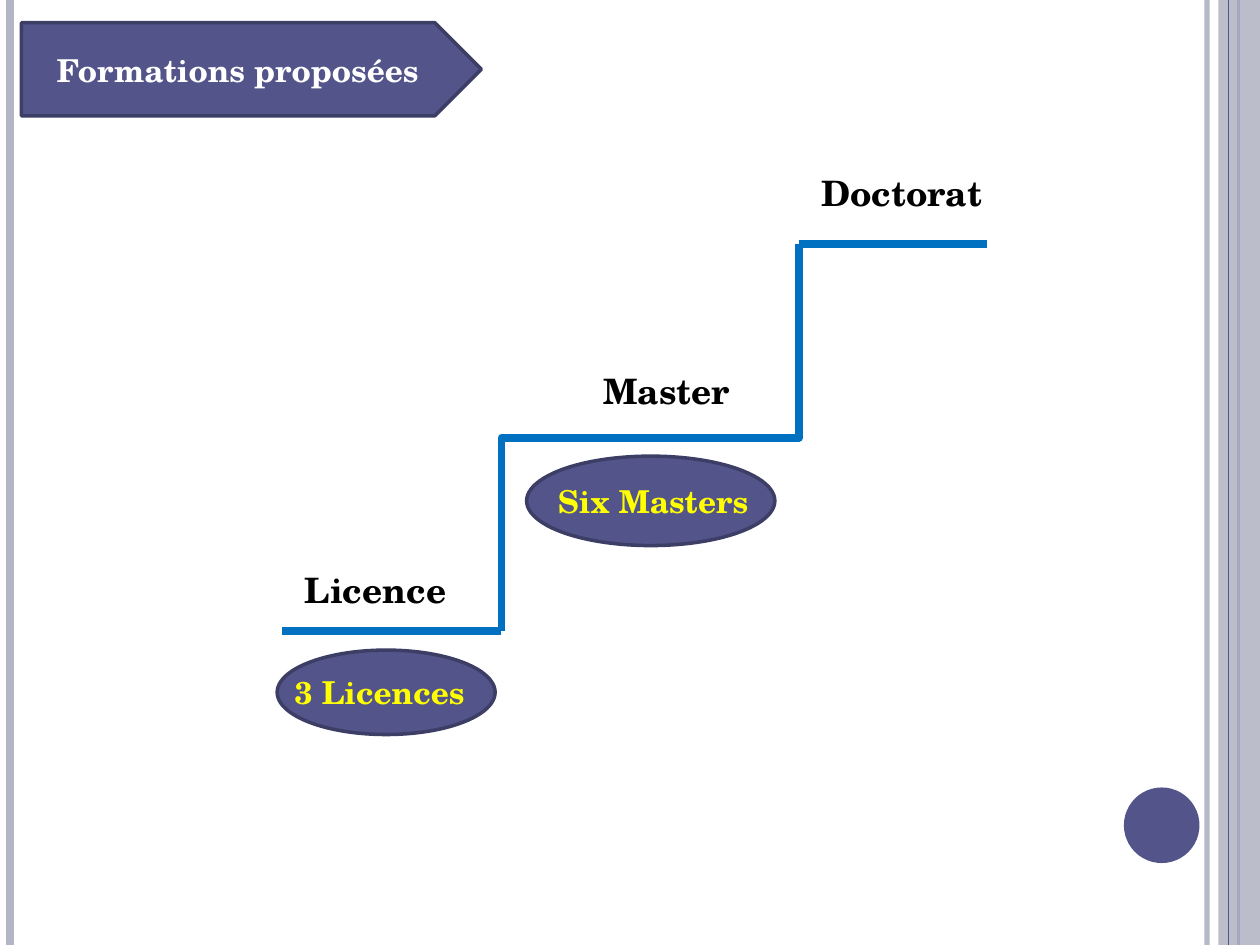
from lxml import etree
from pptx import Presentation, util as u
from pptx.dml.color import RGBColor
from pptx.enum import shapes, text
from pptx.oxml import ns

COLS, ROWS = 10, 7.5
FONT = "TeX Gyre Schola"
INDIGO, EDGE, MIST, BLUE = "53548A", "3D3E66", "B3B4C4", "0070C0"
WHITE, BLACK, YELLOW = "FFFFFF", "000000", "FFFF00"
KIND = shapes.MSO_SHAPE
LINK = shapes.MSO_CONNECTOR


def rgb(code):
    """Turn a hex string into a colour."""
    return RGBColor.from_string(code)


def fade(part, share):
    """Make the solid colour of a part see-through."""
    tone = next(part._element.spPr.iter(ns.qn("a:srgbClr")))
    etree.SubElement(tone, ns.qn("a:alpha")).set("val", str(share * 1000))


def line(slide, start, end, color, width, kind=LINK.STRAIGHT):
    """Draw a connector between two grid points."""
    link = slide.shapes.add_connector(kind, *map(u.Inches, (*start, *end)))
    link.line.color.rgb = rgb(color)
    link.line.width = u.Pt(width)
    etree.SubElement(link._element.spPr, ns.qn("a:effectLst"))
    return link


def solid(slide, kind, box, fill, edge=None):
    """Draw a filled preset shape, with an outline if one is named."""
    form = slide.shapes.add_shape(kind, *map(u.Inches, box))
    form.shadow.inherit = False
    form.fill.solid()
    form.fill.fore_color.rgb = rgb(fill)
    if edge:
        form.line.color.rgb = rgb(edge)
        form.line.width = u.Pt(2)
    else:
        form.line.fill.background()
    return form


def label(slide, box, words, size, color):
    """Write one bold line of text in a box."""
    frame = slide.shapes.add_textbox(*map(u.Inches, box)).text_frame
    frame.word_wrap = True
    frame.auto_size = text.MSO_AUTO_SIZE.SHAPE_TO_FIT_TEXT
    frame.text = words
    font = frame.paragraphs[0].runs[0].font
    font.name, font.size, font.bold = FONT, u.Pt(size), True
    font.color.rgb = rgb(color)


def border(slide, box):
    """Draw the side stripes and the dot of the page."""
    left, top, wide, high = box
    right, foot = left + wide, top + high

    def stripe(x, color, width):
        """Draw one stripe over the full height."""
        return line(slide, (x, top), (x, foot), color, width)

    fade(stripe(right - 0.42, MIST, 3), 93)
    stripe(left + 0.08, MIST, 4.5)
    stripe(right - 0.17, INDIGO, 1.5)
    band = solid(slide, KIND.RECTANGLE, (right - 0.33, top, 0.33, high), MIST)
    fade(band, 87)
    stripe(right - 0.25, INDIGO, 0.75)
    solid(slide, KIND.OVAL, (right - 1.08, foot - 1.25, 0.6, 0.6), INDIGO)


def banner(slide, box, words):
    """Draw the title arrow with its text."""
    left, top, wide, high = box
    solid(slide, KIND.PENTAGON, box, INDIGO, EDGE)
    label(slide, (left + 0.18, top + 0.18, wide - 0.5, 0.4), words, 18, WHITE)


def stairs(slide, box, steps):
    """Draw three steps and the name above each."""
    left, top, wide, high = box
    right, foot = left + wide, top + high
    low, upper = left + 1.74, left + 4.1
    run = upper - low
    mid, half = (low + upper) / 2, top + high / 2
    for name, x, y, span in steps:
        label(slide, (left + x, top + y, span, 0.44), name, 20, BLACK)
    riser = line(slide, (mid + high / 2, half + run / 2),
                 (mid - high / 2, half - run / 2), BLUE, 4.5, LINK.ELBOW)
    riser._element.spPr.find(ns.qn("a:xfrm")).set("rot", str(90 * 60000))
    line(slide, (upper, top), (right, top), BLUE, 4.5)
    line(slide, (left, foot), (low, foot), BLUE, 4.5)


def badge(slide, box, words, shift):
    """Draw an oval with a yellow text, shifted from its left edge."""
    left, top, wide, high = box
    solid(slide, KIND.OVAL, box, INDIGO, EDGE)
    label(slide, (left + shift, top + high / 2 - 0.2, 2.05, 0.4),
          words, 18, YELLOW)


def main():
    """Build the slide and save it."""
    deck = Presentation()
    deck.slide_width, deck.slide_height = u.Inches(COLS), u.Inches(ROWS)
    slide = deck.slides.add_slide(deck.slide_layouts[6])
    border(slide, (0, 0, COLS, ROWS))
    banner(slide, (0.17, 0.18, 3.65, 0.74), "Formations proposées")
    stairs(slide, (2.24, 1.94, 5.59, 3.07), [
        ("Master", 2.45, 0.94, 1.26),
        ("Licence", 0.08, 2.52, 1.65),
        ("Doctorat", 4.18, -0.63, 1.57),
    ])
    badge(slide, (2.2, 5.16, 1.73, 0.67), "3 Licences", 0.04)
    badge(slide, (4.18, 3.62, 1.97, 0.71), "Six Masters", 0.15)
    deck.save("out.pptx")


if __name__ == "__main__":
    main()
